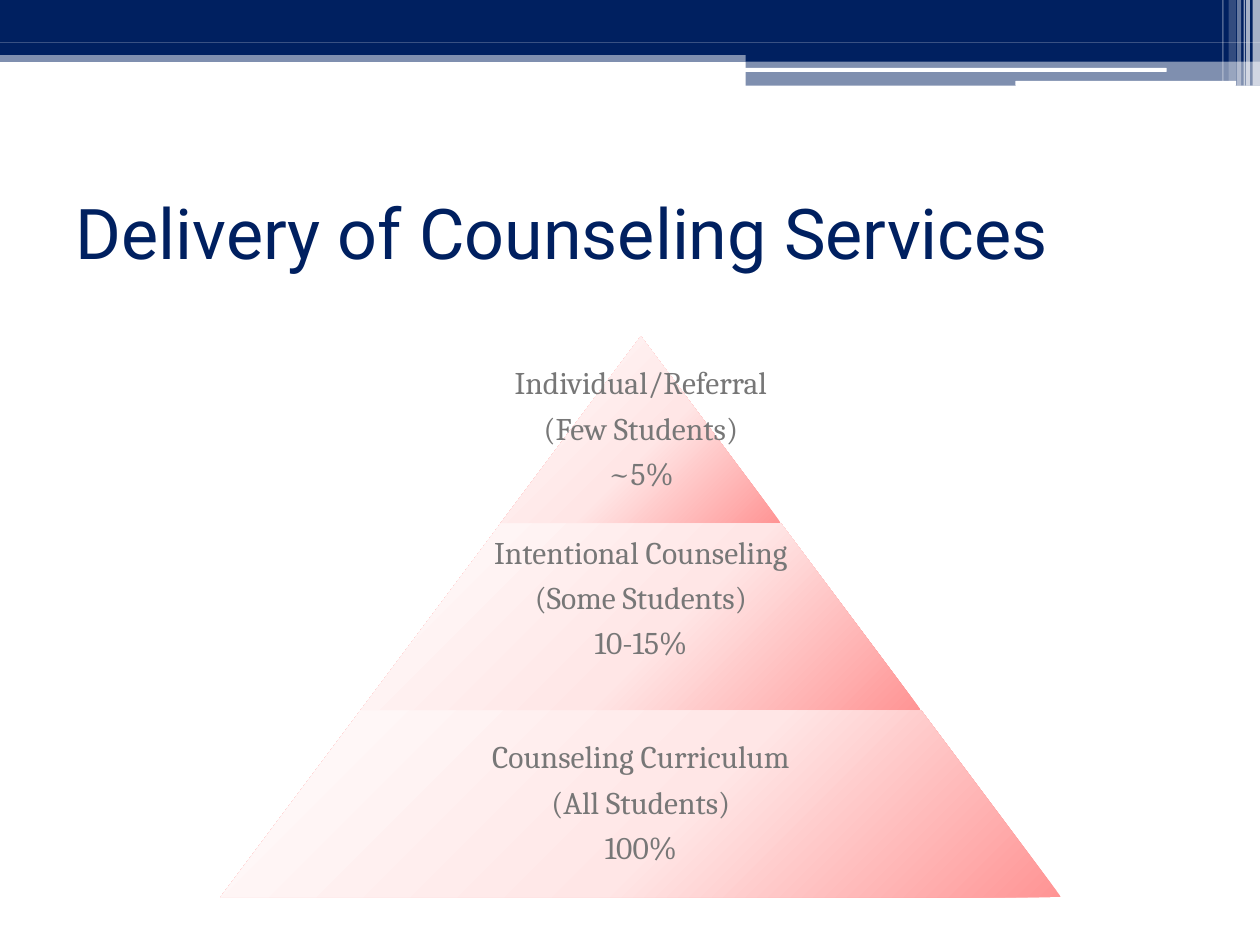
from lxml.etree import SubElement
from pptx import Presentation
from pptx.dml.color import RGBColor
from pptx.enum.shapes import MSO_SHAPE
from pptx.enum.text import MSO_ANCHOR, PP_ALIGN
from pptx.oxml import parse_xml
from pptx.oxml.ns import nsdecls, qn
from pptx.util import Cm, Pt

NAVY = RGBColor(0x00, 0x20, 0x60)
WHITE = RGBColor(0xFF, 0xFF, 0xFF)
GRAY = RGBColor(0x77, 0x77, 0x77)
TIER_STOPS = [
    (0, RGBColor(0xFF, 0xFD, 0xFD)),
    (55, RGBColor(0xFF, 0xE6, 0xE6)),
    (100, RGBColor(0xFF, 0x94, 0x94)),
]

# Header parts in cm: left, top, width, height, colour, opacity in percent
BANDS = [
    (0, 1.02, 25.4, 0.23, NAVY, 50),
    (0, 0, 25.4, 0.86, NAVY, 100),
    (0, 0.86, 25.4, 0.25, NAVY, 100),
    (15.03, 0.99, 10.37, 0.25, NAVY, 100),
    (15.03, 1.23, 10.37, 0.5, NAVY, 50),
]
ROUNDED_LINES = [
    (15.01, 1.37, 8.51, 0.08, WHITE, 100),
    (20.47, 1.63, 4.45, 0.1, WHITE, 100),
]
STRIPES = [
    (25.25, 0, 0.15, 1.73, WHITE, 65),
    (25.12, 0, 0.08, 1.73, WHITE, 65),
    (25.07, 0, 0.03, 1.73, WHITE, 60),
    (24.94, 0, 0.08, 1.73, WHITE, 40),
    (24.77, 0, 0.15, 1.63, WHITE, 20),
    (24.64, 0, 0.03, 1.63, WHITE, 30),
]

# Pyramid in cm
CENTER, TOP = 12.92, 6.78
TIER_HEIGHT, WIDTH_STEP = 3.77, 5.65
INSET = 0.05
# Lines, label width as a share of the tier, bottom inset
TIERS = [
    (["Individual/Referral", "(Few Students)", "~5%"], 1, INSET),
    (["Intentional Counseling", "(Some Students)", "10-15%"], 0.65, 0.74),
    (["Counseling Curriculum", "(All Students)", "100%"], 0.65, INSET),
]


def add_plain_shape(page, kind, left, top, width, height):
    shape = page.shapes.add_shape(kind, Cm(left), Cm(top), Cm(width), Cm(height))
    shape.shadow.inherit = False
    shape.line.fill.background()
    return shape


def add_band(page, kind, left, top, width, height, color, opacity):
    band = add_plain_shape(page, kind, left, top, width, height)
    band.fill.solid()
    band.fill.fore_color.rgb = color
    if opacity < 100:
        color_node = band.fill._xPr.find(qn("a:solidFill"))[0]
        SubElement(color_node, qn("a:alpha")).set("val", str(opacity * 1000))


def add_tier(page, left, top, width, height):
    tier = add_plain_shape(page, MSO_SHAPE.TRAPEZOID, left, top, width, height)
    tier.adjustments[0] = 0.75
    stops = "".join(
        f'<a:gs pos="{position * 1000}"><a:srgbClr val="{color}"/></a:gs>'
        for position, color in TIER_STOPS
    )
    # Radial gradient that spreads from the top left corner
    gradient = parse_xml(
        f'<a:gradFill {nsdecls("a")} rotWithShape="1"><a:gsLst>{stops}</a:gsLst>'
        '<a:path path="circle"><a:fillToRect r="100000" b="100000"/></a:path>'
        "</a:gradFill>"
    )
    tier.element.spPr.find(qn("a:prstGeom")).addnext(gradient)


def format_font(font, name, size, color):
    font.name = name
    font.size = Pt(size)
    font.color.rgb = color


def add_label(page, lines, left, top, width, height, bottom_inset=INSET):
    box = page.shapes.add_textbox(Cm(left), Cm(top), Cm(width), Cm(height))
    frame = box.text_frame
    frame.word_wrap = True
    frame.vertical_anchor = MSO_ANCHOR.MIDDLE
    frame.margin_left = frame.margin_right = frame.margin_top = Cm(INSET)
    frame.margin_bottom = Cm(bottom_inset)
    for index, line in enumerate(lines):
        para = frame.add_paragraph() if index else frame.paragraphs[0]
        para.alignment = PP_ALIGN.CENTER
        para.line_spacing = 0.9
        if index:
            para.space_before = Pt(6.3)
        span = para.add_run()
        span.text = line
        format_font(span.font, "Cambria", 18, GRAY)


def set_title(page, text):
    title = page.shapes.title
    title.left, title.top = Cm(1.27), Cm(3.18)
    title.width, title.height = Cm(22.86), Cm(2.97)
    frame = title.text_frame
    frame.vertical_anchor = MSO_ANCHOR.MIDDLE
    para = frame.paragraphs[0]
    para.alignment = PP_ALIGN.LEFT
    span = para.add_run()
    span.text = text
    format_font(span.font, "Roboto", 40, NAVY)


def main():
    deck = Presentation()
    deck.slide_width, deck.slide_height = Cm(25.4), Cm(19.05)
    page = deck.slides.add_slide(deck.slide_layouts[5])

    # Header decoration
    for kind, parts in (
        (MSO_SHAPE.RECTANGLE, BANDS),
        (MSO_SHAPE.ROUNDED_RECTANGLE, ROUNDED_LINES),
        (MSO_SHAPE.RECTANGLE, STRIPES),
    ):
        for part in parts:
            add_band(page, kind, *part)

    set_title(page, "Delivery of Counseling Services")

    # Pyramid tiers, each one step wider than the one above
    for index, (lines, share, bottom_inset) in enumerate(TIERS):
        top = TOP + index * TIER_HEIGHT
        width = (index + 1) * WIDTH_STEP
        add_tier(page, CENTER - width / 2, top, width, TIER_HEIGHT)
        label_width = width * share
        add_label(page, lines, CENTER - label_width / 2, top, label_width,
                  TIER_HEIGHT, bottom_inset=bottom_inset)

    deck.save("out.pptx")


if __name__ == "__main__":
    main()
